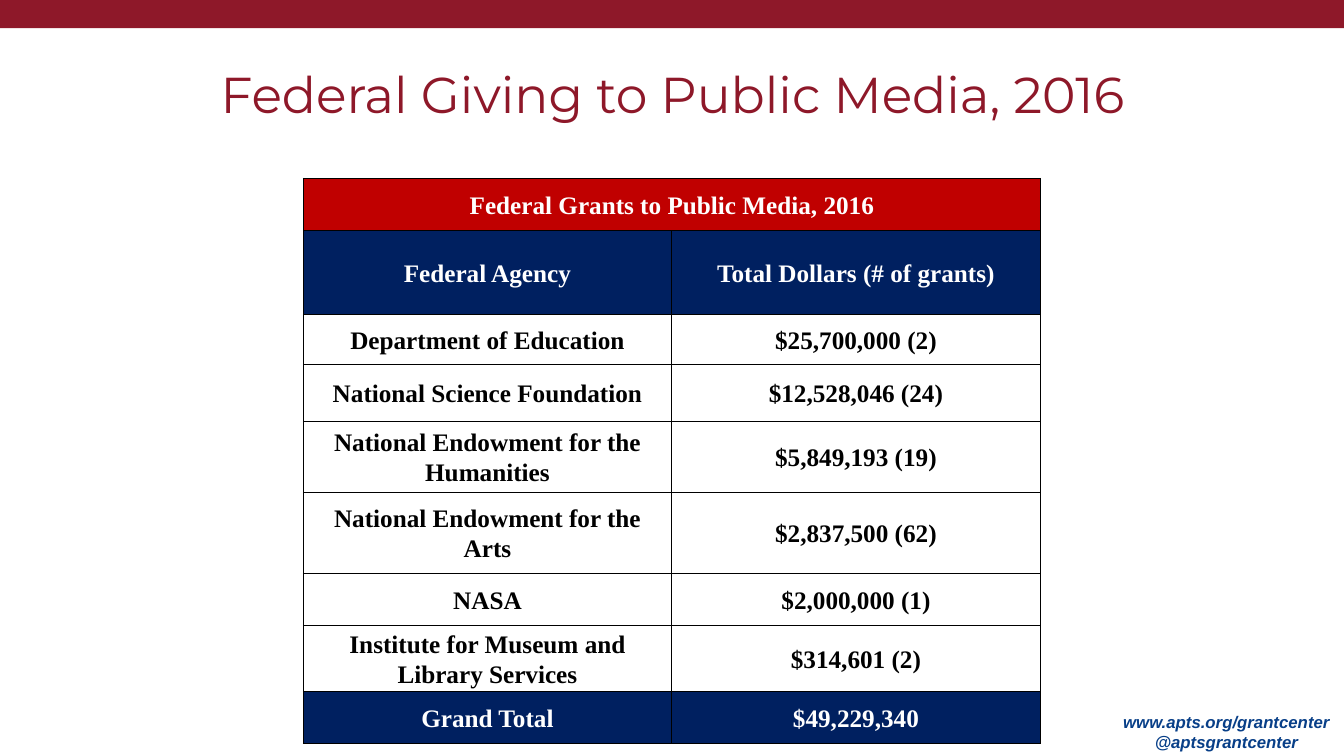
from lxml import etree
from pptx import Presentation, util as u
from pptx.dml.color import RGBColor
from pptx.enum import shapes, text
from pptx.oxml import ns

RED, NAVY, WHITE, BLACK = "8E1829", "002060", "FFFFFF", "000000"
TITLE = "Federal Giving to Public Media, 2016"
LINKS = ["www.apts.org/grantcenter", "@aptsgrantcenter"]
COLS = [3.65, 3.66]
ROWS = [
    (0.52, "C00000", ["Federal Grants to Public Media, 2016"]),
    (0.83, NAVY, ["Federal Agency", "Total Dollars (# of grants)"]),
    (0.5, None, ["Department of Education", "$25,700,000 (2)"]),
    (0.56, None, ["National Science Foundation", "$12,528,046 (24)"]),
    (0.71, None, ["National Endowment for the Humanities", "$5,849,193 (19)"]),
    (0.8, None, ["National Endowment for the Arts", "$2,837,500 (62)"]),
    (0.52, None, ["NASA", "$2,000,000 (1)"]),
    (0.65, None, ["Institute for Museum and Library Services", "$314,601 (2)"]),
    (0.52, NAVY, ["Grand Total", "$49,229,340"]),
]


def color(hue):
    return RGBColor.from_string(hue)


def write(para, words, font, size, hue, bold=False, italic=False):
    para.alignment = text.PP_ALIGN.CENTER
    run = para.add_run()
    run.text = words
    run.font.name, run.font.size = font, u.Pt(size)
    run.font.bold, run.font.italic = bold, italic
    run.font.color.rgb = color(hue)


def label(slide, box, lines, *style):
    frame = slide.shapes.add_textbox(*map(u.Inches, box)).text_frame
    frame.word_wrap = True
    frame.vertical_anchor = text.MSO_ANCHOR.MIDDLE
    for i, line in enumerate(lines):
        para = frame.add_paragraph() if i else frame.paragraphs[0]
        write(para, line, *style)


def edge(cell):
    props = cell._tc.get_or_add_tcPr()
    for i, side in enumerate(["lnL", "lnR", "lnT", "lnB"]):
        line = etree.Element(ns.qn("a:" + side), w=str(u.Pt(1)))
        fill = etree.SubElement(line, ns.qn("a:solidFill"))
        etree.SubElement(fill, ns.qn("a:srgbClr"), val=BLACK)
        props.insert(i, line)


def paint(cell, fill):
    if fill:
        cell.fill.solid()
        cell.fill.fore_color.rgb = color(fill)
    else:
        cell.fill.background()
    cell.margin_left = cell.margin_right = u.Inches(0.07)
    cell.margin_top = cell.margin_bottom = 0
    cell.vertical_anchor = text.MSO_ANCHOR.MIDDLE
    edge(cell)


def grants(slide):
    high = sum(row[0] for row in ROWS)
    size = map(u.Inches, (3.01, 1.77, sum(COLS), high))
    grid = slide.shapes.add_table(len(ROWS), len(COLS), *size).table
    for col, wide in zip(grid.columns, COLS):
        col.width = u.Inches(wide)
    for r, (tall, fill, words) in enumerate(ROWS):
        grid.rows[r].height = u.Inches(tall)
        for c in range(len(COLS)):
            paint(grid.cell(r, c), fill)
        for c, word in enumerate(words):
            para = grid.cell(r, c).text_frame.paragraphs[0]
            para.line_spacing, para.space_after = 1.07, u.Pt(8)
            write(para, word, "Times New Roman", 18, WHITE if fill else BLACK, True)
    grid.cell(0, 0).merge(grid.cell(0, 1))


def main():
    deck = Presentation()
    deck.slide_width, deck.slide_height = u.Inches(13.33), u.Inches(7.5)
    slide = deck.slides.add_slide(deck.slide_layouts[6])
    band = slide.shapes.add_shape(
        shapes.MSO_SHAPE.RECTANGLE, 0, 0, deck.slide_width, u.Inches(0.28))
    band.shadow.inherit = False
    band.fill.solid()
    band.fill.fore_color.rgb = color(RED)
    band.line.fill.background()
    label(slide, (10.98, 7.01, 2.37, 0.5), LINKS, "Arial", 12, "083F88", True, True)
    grants(slide)
    label(slide, (0.67, 0.3, 12, 1.25), [TITLE], "Montserrat", 36, RED)
    deck.save("out.pptx")


if __name__ == "__main__":
    main()
